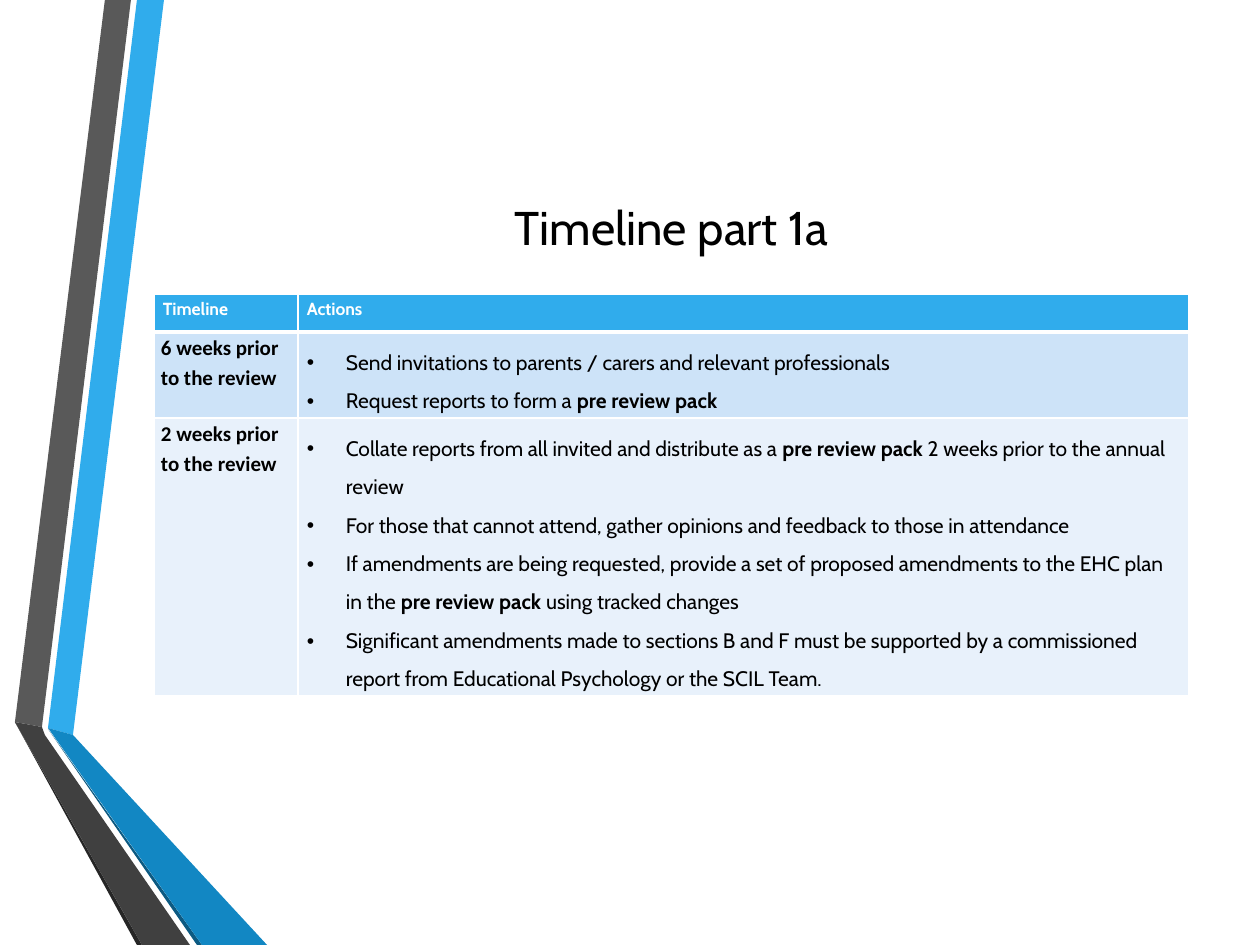
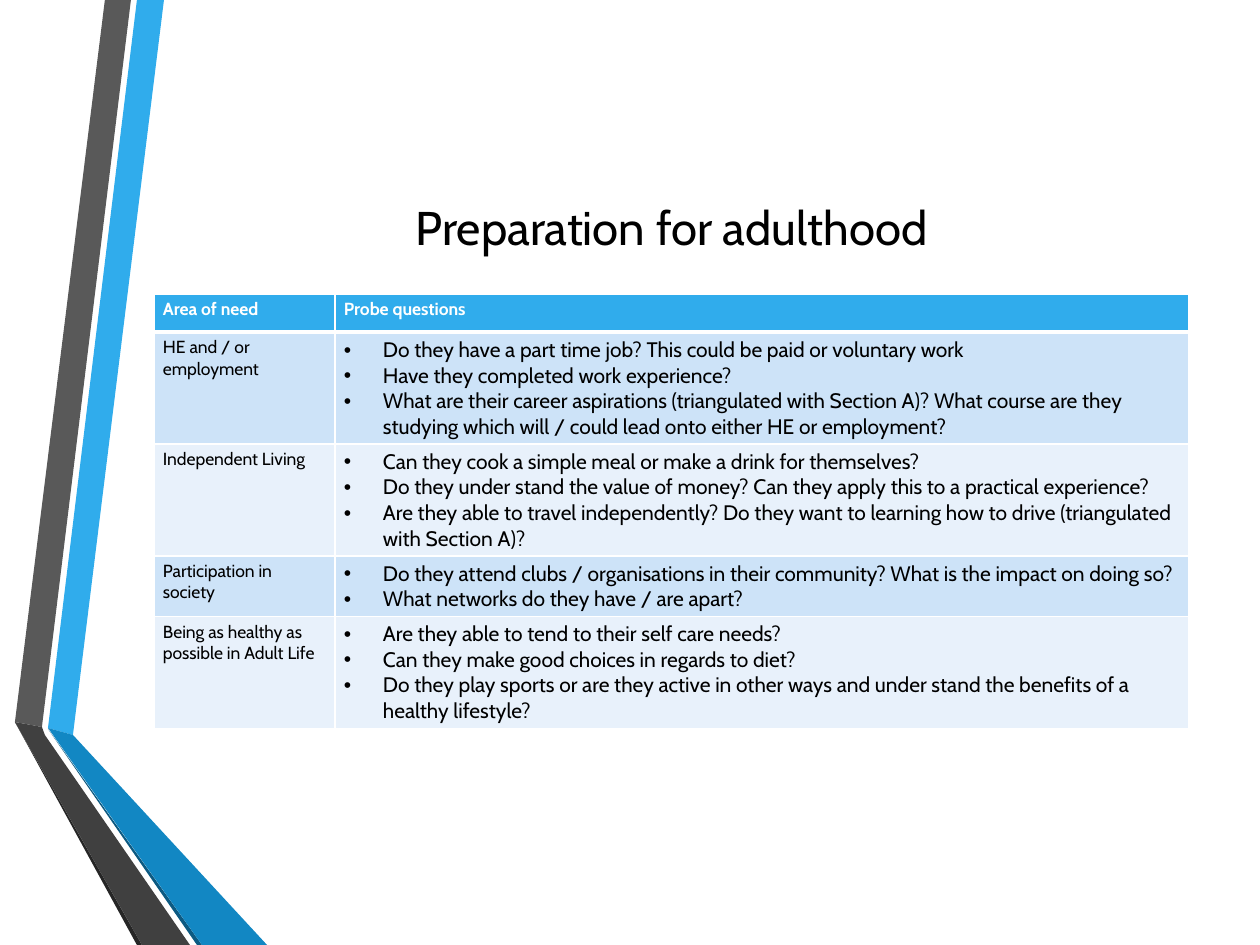
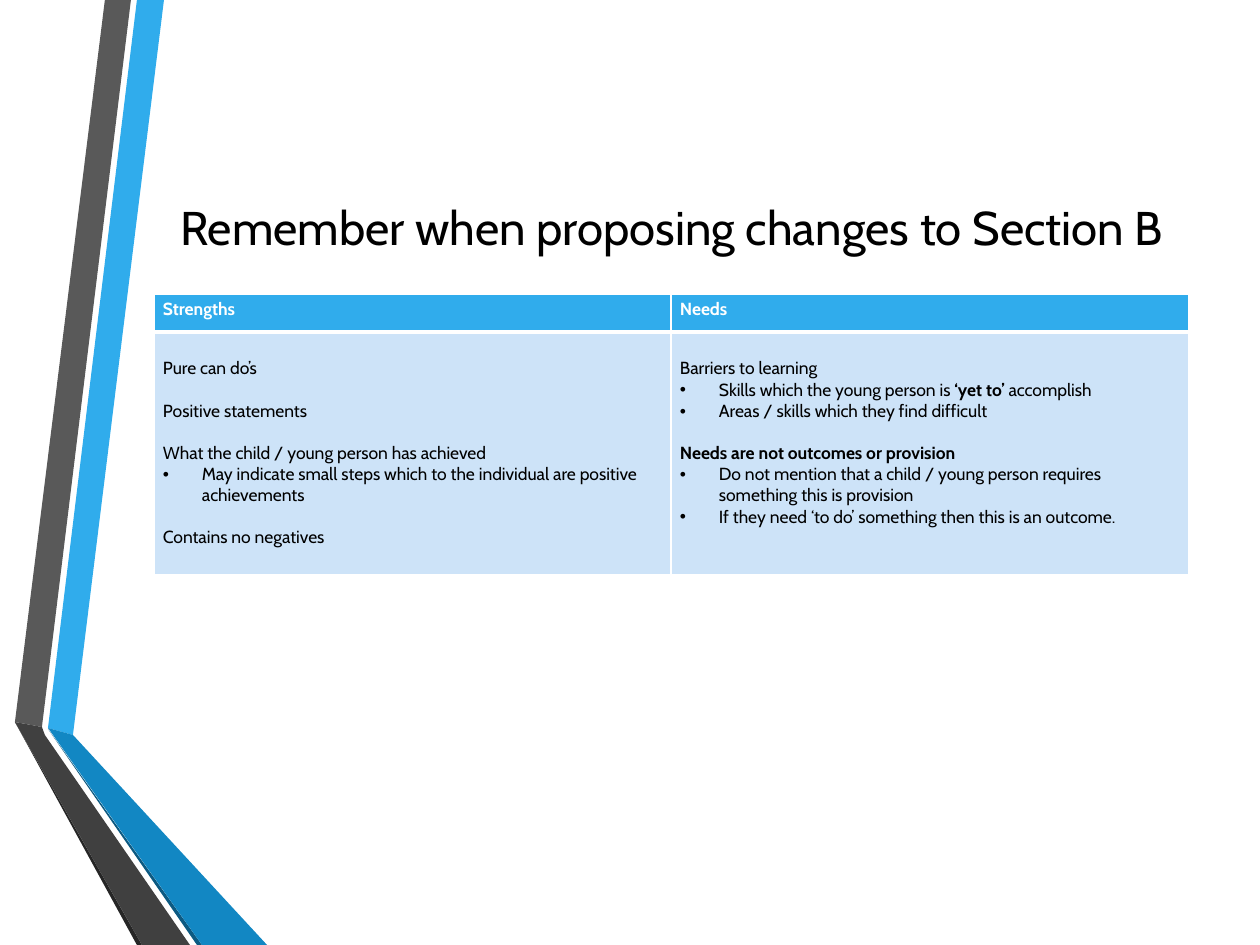
from dataclasses import dataclass
from typing import NamedTuple

from lxml.etree import SubElement
from pptx import Presentation
from pptx.dml.color import RGBColor
from pptx.enum.text import MSO_ANCHOR, PP_ALIGN
from pptx.oxml import parse_xml
from pptx.oxml.ns import nsdecls, qn
from pptx.util import Emu, Pt

EMU_PER_PX = 914400 / 126


def px(length):
    return Emu(round(length * EMU_PER_PX))


class Box(NamedTuple):
    left: int
    top: int
    width: int
    height: int

    def to_emu(self):
        return [px(length) for length in self]


@dataclass(frozen=True)
class Theme:
    font: str = "Cabin"
    period_font: str = "Calibri"
    black: str = "000000"
    white: str = "FFFFFF"
    blue: str = "30ACEC"
    mid_blue: str = "1287C3"
    deep_blue: str = "0C5A82"
    gray: str = "595959"
    dark_gray: str = "404040"
    deep_gray: str = "262626"
    bands: tuple = ("CDE3F8", "E8F1FB")
    title_size: int = 27
    large_size: int = 12
    small_size: int = 10
    thin_border: int = 1
    thick_border: int = 3


class Line(NamedTuple):
    text: str
    bullet: bool = False
    gap: int = 0


@dataclass(frozen=True)
class CellFormat:
    size: int = Theme.small_size
    font: str = Theme.font
    color: str = Theme.black
    bold: bool = False
    line_spacing: float = 1.0
    side_margin: int = 9
    top_margin: int = 5
    bottom_margin: int = 5


THEME = Theme()
RIBBON_BOX = Box(15, 0, 252, 945)
TITLE_BOX = Box(154, 189, 1035, 76)
TABLE_LEFT, TABLE_TOP, TABLE_WIDTH = 154, 294, 1035
HEADER_HEIGHT = 38
BULLET_INDENT = 39
HEADER_FORMAT = CellFormat(color=THEME.white, bold=True)
LABEL_FORMAT = CellFormat()
QUESTION_FORMAT = CellFormat(size=THEME.large_size)
ACTION_FORMAT = CellFormat(size=THEME.large_size, line_spacing=1.5)
PERIOD_FORMAT = CellFormat(
    size=THEME.large_size, font=THEME.period_font, bold=True, line_spacing=1.15,
    side_margin=7, top_margin=0, bottom_margin=0,
)
ADVICE_FORMAT = CellFormat(top_margin=26)

RIBBONS = [
    (THEME.blue, [(33, 728), (58, 735), (149, 0), (122, 0)]),
    (THEME.gray, [(116, 0), (90, 0), (0, 722), (27, 727)]),
    (THEME.deep_gray, [(0, 722), (122, 945), (127, 945)]),
    (THEME.deep_blue, [(33, 729), (182, 945), (187, 945)]),
    (THEME.mid_blue, [(33, 728), (187, 945), (252, 945), (58, 735)]),
    (THEME.dark_gray, [(175, 945), (30, 735), (27, 727), (0, 722), (127, 945)]),
]


def bullets(*texts):
    return [Line(text, bullet=True) for text in texts]


SLIDES = [
    {
        "title": "Timeline part 1a",
        "headers": ("Timeline", "Actions"),
        "first_column": 144,
        "row_heights": (86, 278),
        "formats": (PERIOD_FORMAT, ACTION_FORMAT),
        "rows": [
            (
                [Line("6 weeks prior to the review")],
                bullets(
                    "Send invitations to parents / carers and relevant professionals",
                    "Request reports to form a **pre review pack**",
                ),
            ),
            (
                [Line("2 weeks prior to the review")],
                bullets(
                    "Collate reports from all invited and distribute as a **pre review pack **"
                    "2 weeks prior to the annual review",
                    "For those that cannot attend, gather opinions and feedback to those in attendance",
                    "If amendments are being requested, provide a set of proposed amendments to the "
                    "EHC plan in the **pre review pack **using tracked changes",
                    "Significant amendments made to sections B and F must be supported by a "
                    "commissioned report from Educational Psychology or the SCIL Team.",
                ),
            ),
        ],
    },
    {
        "title": "Preparation for adulthood",
        "headers": ("Area of need", "Probe questions"),
        "first_column": 181,
        "row_heights": (112, 112, 60, 112),
        "formats": (LABEL_FORMAT, QUESTION_FORMAT),
        "rows": [
            (
                [Line("HE and / or employment")],
                bullets(
                    "Do they have a part time job? This could be paid or voluntary work",
                    "Have they completed work experience?",
                    "What are their career aspirations (triangulated with Section A)? What course "
                    "are they studying which will / could lead onto either HE or employment?",
                ),
            ),
            (
                [Line("Independent Living")],
                bullets(
                    "Can they cook a simple meal or make a drink for themselves?",
                    "Do they under stand the value of money? Can they apply this to a practical "
                    "experience?",
                    "Are they able to travel independently? Do they want to learning how to drive "
                    "(triangulated with Section A)?",
                ),
            ),
            (
                [Line("Participation in society")],
                bullets(
                    "Do they attend clubs / organisations in their community? What is the impact "
                    "on doing so?",
                    "What networks do they have / are apart?",
                ),
            ),
            (
                [Line("Being as healthy as possible in Adult Life")],
                bullets(
                    "Are they able to tend to their self care needs?",
                    "Can they make good choices in regards to diet?",
                    "Do they play sports or are they active in other ways and under stand the "
                    "benefits of a healthy lifestyle?",
                ),
            ),
        ],
    },
    {
        "title": "Remember when proposing changes to Section B",
        "headers": ("Strengths", "Needs"),
        "first_column": 517,
        "row_heights": (243,),
        "formats": (ADVICE_FORMAT, ADVICE_FORMAT),
        "rows": [
            (
                [
                    Line("Pure can do’s"),
                    Line("Positive statements", gap=12),
                    Line("What the child / young person has achieved", gap=12),
                    *bullets(
                        "May indicate small steps which to the individual are positive achievements"
                    ),
                    Line("Contains no negatives", gap=12),
                ],
                [
                    Line("Barriers to learning"),
                    *bullets(
                        "Skills which the young person is **‘yet to’** accomplish",
                        "Areas / skills which they find difficult",
                    ),
                    Line("**Needs are not outcomes or provision**", gap=12),
                    *bullets(
                        "Do not mention that a child / young person requires something this is "
                        "provision",
                        "If they need ‘to do’ something then this is an outcome.",
                    ),
                ],
            ),
        ],
    },
]


def write_text(paragraph, text, *, size, font=THEME.font, color=THEME.black, bold=False,
               bullet=False, line_spacing=1.0, gap=0, alignment=PP_ALIGN.LEFT):
    paragraph.alignment = alignment
    paragraph.line_spacing = line_spacing
    if gap:
        paragraph.space_before = Pt(gap)
    if bullet:
        properties = paragraph._p.get_or_add_pPr()
        properties.set("marL", str(px(BULLET_INDENT)))
        properties.set("indent", str(-px(BULLET_INDENT)))
        SubElement(properties, qn("a:buFont"), typeface="Arial")
        SubElement(properties, qn("a:buChar"), char="•")
    for index, part in enumerate(text.split("**")):
        if part:
            run = paragraph.add_run()
            run.text = part
            run.font.name = font
            run.font.size = Pt(size)
            run.font.bold = bold or index % 2 == 1
            run.font.color.rgb = RGBColor.from_string(color)


def set_borders(cell, top, bottom):
    widths = {"lnL": THEME.thin_border, "lnR": THEME.thin_border, "lnT": top, "lnB": bottom}
    properties = cell._tc.get_or_add_tcPr()
    for index, (side, width) in enumerate(widths.items()):
        properties.insert(index, parse_xml(
            f'<a:{side} {nsdecls("a")} w="{Pt(width)}"><a:solidFill>'
            f'<a:srgbClr val="{THEME.white}"/></a:solidFill></a:{side}>'
        ))


def fill_cell(cell, lines, cell_format, fill, top, bottom):
    cell.fill.solid()
    cell.fill.fore_color.rgb = RGBColor.from_string(fill)
    set_borders(cell, top, bottom)
    cell.margin_left = cell.margin_right = px(cell_format.side_margin)
    cell.margin_top = px(cell_format.top_margin)
    cell.margin_bottom = px(cell_format.bottom_margin)
    for index, line in enumerate(lines):
        frame = cell.text_frame
        paragraph = frame.add_paragraph() if index else frame.paragraphs[0]
        write_text(
            paragraph, line.text, size=cell_format.size, font=cell_format.font,
            color=cell_format.color, bold=cell_format.bold, bullet=line.bullet,
            line_spacing=cell_format.line_spacing, gap=line.gap,
        )


def add_ribbons(slide, box):
    for color, points in RIBBONS:
        start, *others = [(box.left + x, box.top + y) for x, y in points]
        builder = slide.shapes.build_freeform(*start, scale=EMU_PER_PX)
        builder.add_line_segments(others, close=True)
        shape = builder.convert_to_shape()
        shape.shadow.inherit = False
        shape.fill.solid()
        shape.fill.fore_color.rgb = RGBColor.from_string(color)
        shape.line.fill.background()


def add_title(slide, box, text):
    frame = slide.shapes.add_textbox(*box.to_emu()).text_frame
    frame.word_wrap = True
    frame.vertical_anchor = MSO_ANCHOR.MIDDLE
    write_text(frame.paragraphs[0], text, size=THEME.title_size, alignment=PP_ALIGN.CENTER)


def add_guidance_table(slide, box, content):
    heights = (HEADER_HEIGHT, *content["row_heights"])
    table = slide.shapes.add_table(len(heights), 2, *box.to_emu()).table
    table.first_row = False
    table.horz_banding = False
    table.columns[0].width = px(content["first_column"])
    table.columns[1].width = px(box.width - content["first_column"])
    for row, height in zip(table.rows, heights):
        row.height = px(height)
    for column, header in enumerate(content["headers"]):
        fill_cell(table.cell(0, column), [Line(header)], HEADER_FORMAT, THEME.blue,
                  THEME.thin_border, THEME.thick_border)
    for index, row_lines in enumerate(content["rows"]):
        top = THEME.thin_border if index else THEME.thick_border
        for column, lines in enumerate(row_lines):
            fill_cell(table.cell(index + 1, column), lines, content["formats"][column],
                      THEME.bands[index % 2], top, THEME.thin_border)


def add_guidance_slide(presentation, content):
    slide = presentation.slides.add_slide(presentation.slide_layouts[6])
    add_ribbons(slide, RIBBON_BOX)
    add_title(slide, TITLE_BOX, content["title"])
    table_height = HEADER_HEIGHT + sum(content["row_heights"])
    add_guidance_table(slide, Box(TABLE_LEFT, TABLE_TOP, TABLE_WIDTH, table_height), content)


def main():
    presentation = Presentation()
    presentation.slide_width = px(1260)
    presentation.slide_height = px(945)
    for content in SLIDES:
        add_guidance_slide(presentation, content)
    presentation.save("out.pptx")


if __name__ == "__main__":
    main()
